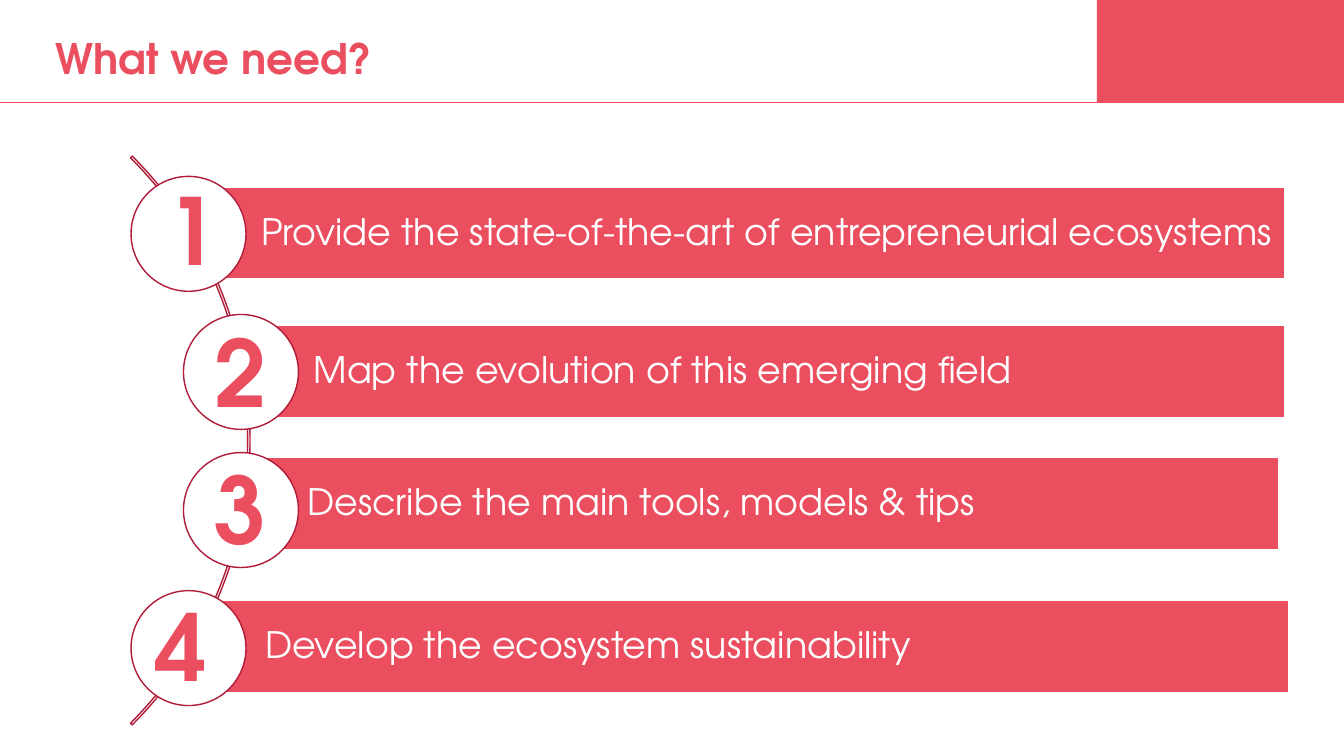
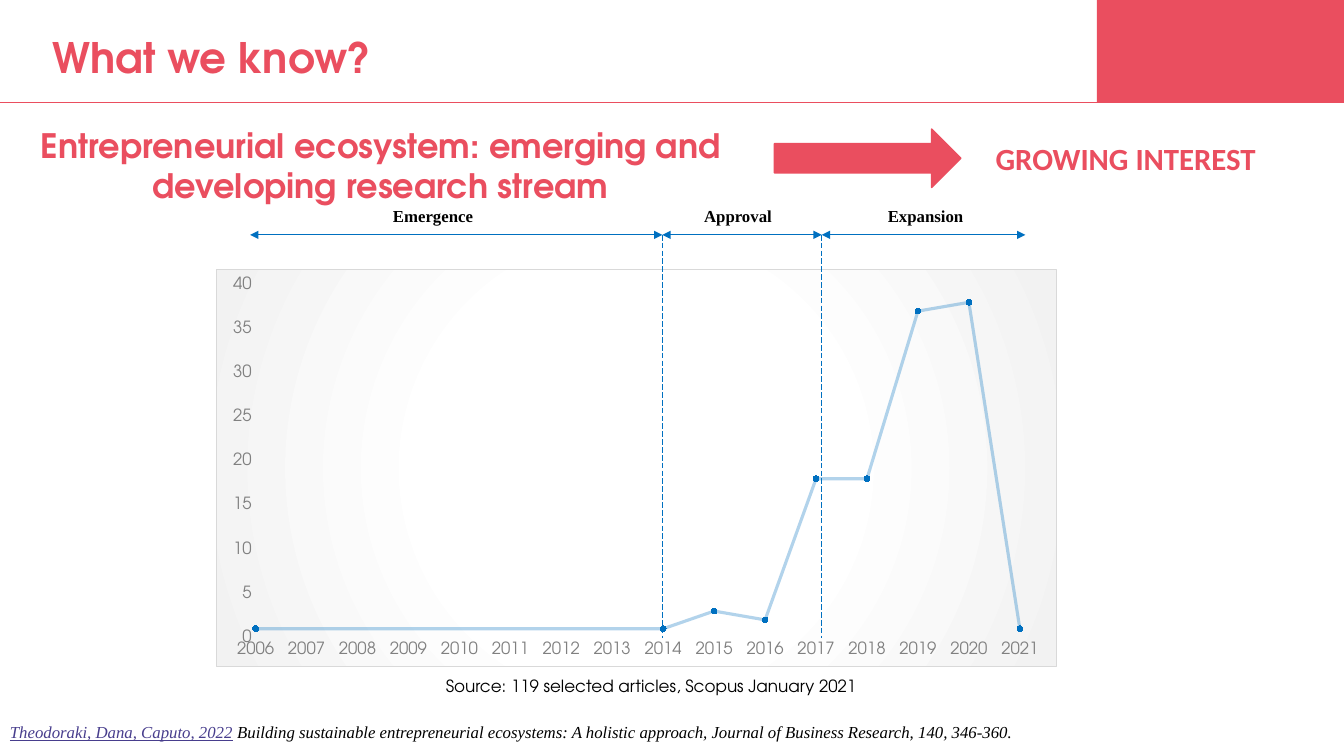
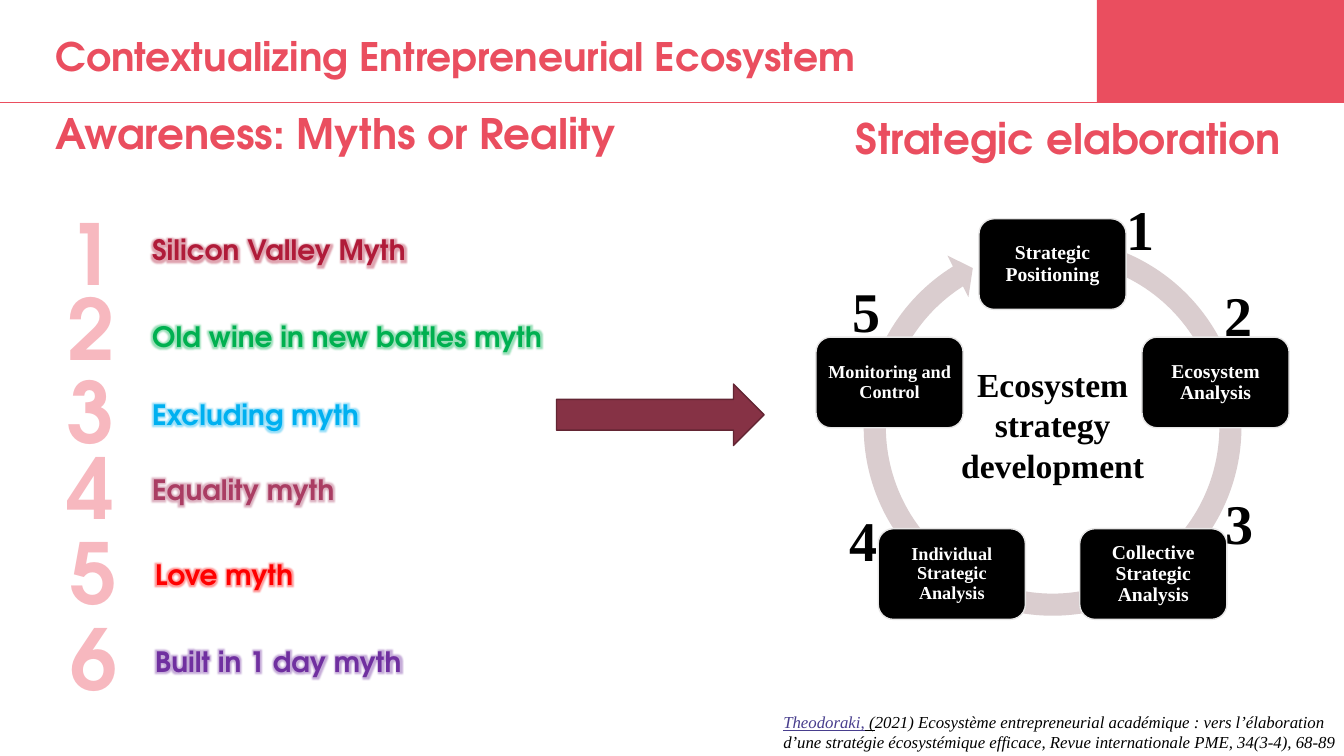
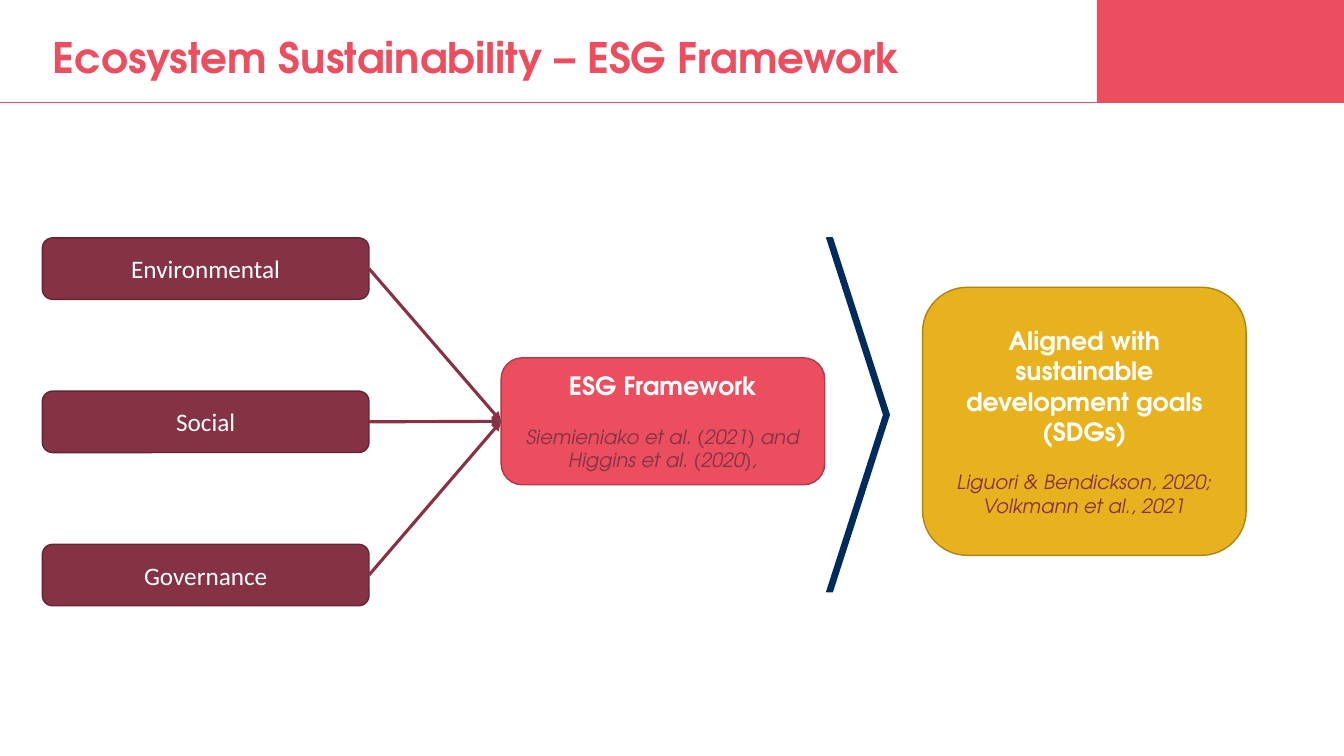
import math
import typing
import lxml.etree
import pptx
import pptx.chart.data
import pptx.dml.color
import pptx.enum.chart
import pptx.enum.dml
import pptx.enum.shapes
import pptx.enum.text
import pptx.oxml
import pptx.oxml.ns
import pptx.util

W, H = 13.33, 7.5
BAND_W, BAND_H = 2.45, 1.02

CORAL, WINE, DARK_WINE, CRIMSON = "EA4E5F", "863245", "632533", "B01B39"
PINK, MAUVE, NAVY, GOLD, BLUE = "F7B8BF", "DACDCF", "002B5C", "E8B21F", "0070C0"
BLACK, WHITE, GRAY, LINK = "000000", "FFFFFF", "808080", "483E8D"

SANS, SERIF, PLAIN = "TeX Gyre Adventor", "Times New Roman", "Calibri"
INSET = (0.1, 0.05, 0.1, 0.05)

SHAPE = pptx.enum.shapes.MSO_SHAPE
ALIGN = pptx.enum.text.PP_ALIGN
ANCHOR = pptx.enum.text.MSO_ANCHOR
LEFT_SITE, RIGHT_SITE = 1, 3


class Need(typing.NamedTuple):
    text: str
    indent: float
    bar_dx: float
    bar_dy: float
    digit_dx: float
    digit_dy: float


class Myth(typing.NamedTuple):
    text: str
    color: str
    indent: float
    digit_y: float
    text_y: float


class Step(typing.NamedTuple):
    text: str
    size: int
    digit_dx: float
    digit_dy: float


class Phase(typing.NamedTuple):
    name: str
    start: float
    end: float
    shift: float


NEEDS = (
    Need("Provide the state-of-the-art of entrepreneurial ecosystems", 0, 0.57, 0.11, 0.25, -0.08),
    Need("Map the evolution of this emerging field", 0.52, 0.57, 0.11, 0.21, -0.04),
    Need("Describe the main tools, models & tips", 0.52, 0.51, 0.05, 0.21, -0.05),
    Need("Develop the ecosystem sustainability", 0, 0.61, 0.1, 0.14, -0.06),
)
ARTICLES = {2021: 1, 2020: 38, 2019: 37, 2018: 18, 2017: 18, 2016: 2, 2015: 3, 2014: 1, 2006: 1}
PHASES = (
    Phase("Emergence", 2.48, 6.57, -0.23),
    Phase("Approval", 6.57, 8.15, -0.04),
    Phase("Expansion", 8.15, 10.17, 0.02),
)
MYTHS = (
    Myth("Silicon Valley Myth", CRIMSON, 0, 1.95, 2.26),
    Myth("Old wine in new bottles myth", "00B050", 0, 2.69, 3.12),
    Myth("Excluding myth", "00B0F0", 0, 3.52, 3.89),
    Myth("Equality myth", "AA3D63", 0, 4.27, 4.64),
    Myth("Love myth", "FF0000", 0.03, 5.11, 5.48),
    Myth("Built in 1 day myth", "7030A0", 0.03, 5.97, 6.34),
)
STEPS = (
    Step("Strategic Positioning", 14, 1.36, -0.29),
    Step("Ecosystem Analysis", 14, 0.72, -0.61),
    Step("Collective Strategic Analysis", 14, 1.35, -0.45),
    Step("Individual Strategic Analysis", 13, -0.38, -0.28),
    Step("Monitoring and Control", 13, 0.26, -0.65),
)
PILLARS = ("Environmental", "Social", "Governance")


def rgb(color):
    return pptx.dml.color.RGBColor.from_string(color)


def inches(*values):
    return [pptx.util.Inches(v) for v in values]


def find(element, tag):
    return element.find(".//" + pptx.oxml.ns.qn(tag))


def child(parent, tag, **attributes):
    return lxml.etree.SubElement(parent, pptx.oxml.ns.qn(tag), attributes)


def style(font, size, color, name=SANS, bold=False, italic=False, underline=False):
    font.size, font.name = pptx.util.Pt(size), name
    font.bold, font.italic, font.underline = bold, italic, underline
    font.color.rgb = rgb(color)


def write(p, text, size, color, align=ALIGN.LEFT, **look):
    p.text = text
    p.alignment = align
    for r in p.runs:
        style(r.font, size, color, **look)


def frame(sp, anchor=ANCHOR.TOP, inset=INSET, wrap=True):
    tf = sp.text_frame
    tf.auto_size = pptx.enum.text.MSO_AUTO_SIZE.NONE
    tf.word_wrap = wrap
    tf.vertical_anchor = anchor
    tf.margin_left, tf.margin_top, tf.margin_right, tf.margin_bottom = inches(*inset)
    return tf.paragraphs[0]


def textbox(s, box, text, size, color, anchor=ANCHOR.TOP, wrap=True, **look):
    sp = s.shapes.add_textbox(*inches(*box))
    write(frame(sp, anchor, wrap=wrap), text, size, color, **look)
    return sp


def shape(s, kind, box, fill=None, line=None, adjust=()):
    sp = s.shapes.add_shape(kind, *inches(*box))
    sp.shadow.inherit = False
    if fill:
        sp.fill.solid()
        sp.fill.fore_color.rgb = rgb(fill)
    else:
        sp.fill.background()
    if line:
        sp.line.color.rgb = rgb(line)
        sp.line.width = pptx.util.Pt(1)
    else:
        sp.line.fill.background()
    for i, value in enumerate(adjust):
        sp.adjustments[i] = value
    return sp


def percent(value):
    return value / 100


def angle(degrees):
    return degrees * 60000 / 100000


def connector(s, start, end, color, width, dashed=False, ends=()):
    c = s.shapes.add_connector(pptx.enum.shapes.MSO_CONNECTOR.STRAIGHT, *inches(*start, *end))
    c.line.color.rgb = rgb(color)
    c.line.width = pptx.util.Pt(width)
    if dashed:
        c.line.dash_style = pptx.enum.dml.MSO_LINE.LONG_DASH
    for end_tag in ends:
        child(find(c.element, "a:ln"), end_tag, type="triangle")
    child(c.element.spPr, "a:effectLst")
    return c


def citation(s, box, runs):
    p = frame(s.shapes.add_textbox(*inches(*box)))
    for text, color, underline in runs:
        r = p.add_run()
        r.text = text
        style(r.font, 12, color, name=SERIF, italic=True, underline=underline)


def dress_layout(s):
    rule = connector(s, (0, BAND_H), (W, BAND_H), CORAL, 1)
    band = shape(s, SHAPE.RECTANGLE, (W - BAND_W, 0, BAND_W, BAND_H), CORAL)
    for sp in (rule, band):
        s.slide_layout.shapes.element.append(sp.element)


def titled_slide(prs, title, left=0.42, top=0.26, size=30):
    s = prs.slides.add_slide(prs.slide_layouts[5])
    sp = s.shapes.title
    sp.left, sp.top, sp.width, sp.height = inches(left, top, 10.05, 0.61)
    write(frame(sp), title, size, CORAL, bold=True)
    return s


def needs_list(s, left, top):
    pitch, disc, bar_w, bar_h, arc = 1.37, 1.14, 10.87, 0.91, 7.98
    shape(s, SHAPE.BLOCK_ARC, (left - 6.8, top - pitch, arc, arc), line=CRIMSON,
          adjust=(angle(315), angle(45), percent(0.3)))
    for i, need in enumerate(NEEDS):
        x, y = left + need.indent, top + i * pitch
        bar_box = (x + need.bar_dx, y + need.bar_dy, bar_w - need.indent, bar_h)
        bar = shape(s, SHAPE.RECTANGLE, bar_box, CORAL, WHITE)
        p = frame(bar, ANCHOR.MIDDLE, (0.72, 0.07, 0.07, 0.07))
        write(p, need.text, 26, WHITE)
        p.line_spacing = 0.9
        shape(s, SHAPE.OVAL, (x, y, disc, disc), WHITE, CRIMSON)
        textbox(s, (x + need.digit_dx, y + need.digit_dy, 0.87, 1.21), str(i + 1), 66, CORAL, bold=True)


def style_axis(axis, low, high, step):
    axis.minimum_scale, axis.maximum_scale, axis.major_unit = low, high, step
    axis.has_major_gridlines = axis.has_minor_gridlines = False
    axis.major_tick_mark = axis.minor_tick_mark = pptx.enum.chart.XL_TICK_MARK.NONE
    axis.format.line.fill.background()
    labels = axis.tick_labels
    labels.number_format, labels.number_format_is_linked = "General", False
    style(labels.font, 12, GRAY)


def style_series(series, color):
    series.smooth = False
    series.format.line.width = pptx.util.Pt(2.25)
    series.format.line.color.rgb = rgb(color)
    marker = series.marker
    marker.style = pptx.enum.chart.XL_MARKER_STYLE.CIRCLE
    marker.size = 4
    marker.format.fill.solid()
    marker.format.fill.fore_color.rgb = rgb(color)
    marker.format.line.color.rgb = rgb(color)


def fade_series_line(chart):
    line = find(find(chart.element, "c:ser"), "a:ln")
    child(find(line, "a:srgbClr"), "a:alpha", val="30000")


def fill_chart_area(chart):
    area = lxml.etree.Element(pptx.oxml.ns.qn("c:spPr"))
    gradient = child(area, "a:gradFill")
    stops = child(gradient, "a:gsLst")
    for position, color in (("43000", WHITE), ("100000", "F2F2F2")):
        child(child(stops, "a:gs", pos=position), "a:srgbClr", val=color)
    center = dict.fromkeys("ltrb", "50000")
    child(child(gradient, "a:path", path="circle"), "a:fillToRect", **center)
    border = child(child(area, "a:ln", w="9525"), "a:solidFill")
    child(border, "a:srgbClr", val="D9D9D9")
    find(chart.element, "c:chart").addnext(area)


def place_plot(chart, shares):
    plot = find(chart.element, "c:plotArea")
    for old in plot.findall(pptx.oxml.ns.qn("c:layout")):
        plot.remove(old)
    layout = lxml.etree.Element(pptx.oxml.ns.qn("c:layout"))
    plot.insert(0, layout)
    manual = child(layout, "c:manualLayout")
    for tag, value in (("c:layoutTarget", "inner"), ("c:xMode", "edge"), ("c:yMode", "edge")):
        child(manual, tag, val=value)
    for tag, share in zip(("c:x", "c:y", "c:w", "c:h"), shares):
        child(manual, tag, val=str(share))


def articles_chart(s, box):
    width, height = box[2:]
    data = pptx.chart.data.XyChartData()
    articles = data.add_series("Series 1")
    for year, count in ARTICLES.items():
        articles.add_data_point(year, count)
    kind = pptx.enum.chart.XL_CHART_TYPE.XY_SCATTER_LINES
    chart = s.shapes.add_chart(kind, *inches(*box), data).chart
    chart.has_title = chart.has_legend = False
    style(chart.font, 10, BLACK)
    chart.plots[0].vary_by_categories = False
    style_axis(chart.category_axis, min(ARTICLES), max(ARTICLES), 1)
    style_axis(chart.value_axis, 0, 40, 5)
    style_series(chart.plots[0].series[0], BLUE)
    fade_series_line(chart)
    fill_chart_area(chart)
    place_plot(chart, (0.39 / width, 0.15 / height, 7.59 / width, 3.51 / height))


def phase_marks(s, top, bottom):
    label_w = 2.41
    for phase in PHASES:
        connector(s, (phase.start, top), (phase.end, top), BLUE, 0.5, ends=("a:headEnd", "a:tailEnd"))
        center = (phase.start + phase.end) / 2 + phase.shift
        textbox(s, (center - label_w / 2, top - 0.34, label_w, 0.22), phase.name, 12, BLACK,
                name=SERIF, bold=True, align=ALIGN.CENTER)
    for phase in PHASES[1:]:
        connector(s, (phase.start, top), (phase.start, bottom), BLUE, 0.5, dashed=True)


def add_glow(sp, color):
    effects = lxml.etree.Element(pptx.oxml.ns.qn("a:effectLst"))
    glow = child(effects, "a:glow", rad="101600")
    child(child(glow, "a:srgbClr", val=color), "a:alpha", val="40000")
    find(find(sp.element, "a:rPr"), "a:solidFill").addnext(effects)


def myths_list(s, left):
    for i, myth in enumerate(MYTHS):
        x = left + myth.indent
        textbox(s, (x, myth.digit_y, 1.34, 1.11), str(i + 1), 60, PINK, bold=True, align=ALIGN.CENTER)
        label = textbox(s, (x + 1.18, myth.text_y, 4.2, 0.44), myth.text, 20, myth.color, bold=True)
        add_glow(label, myth.color)


def strategy_cycle(s, cx, cy):
    radius, node_w, node_h, ring = 1.7, 1.46, 0.9, 3.99
    shape(s, SHAPE.CIRCULAR_ARROW, (cx - ring / 2, cy - 2.08, ring, ring), MAUVE,
          adjust=(percent(5.5), angle(5.51), angle(237.83), angle(284.87), percent(5.8)))
    for i, step in enumerate(STEPS):
        turn = 2 * math.pi * i / len(STEPS)
        x = cx + radius * math.sin(turn) - node_w / 2
        y = cy - radius * math.cos(turn) - node_h / 2
        node = shape(s, SHAPE.ROUNDED_RECTANGLE, (x, y, node_w, node_h), BLACK, "E7E6E6")
        p = frame(node, ANCHOR.MIDDLE, (0.05, 0.05, 0.05, 0.05))
        write(p, step.text, step.size, WHITE, name=SERIF, bold=True, align=ALIGN.CENTER)
        p.line_spacing = 0.9
        textbox(s, (x + step.digit_dx, y + step.digit_dy, 0.57, 0.77), str(i + 1), 40, BLACK,
                name=SERIF, bold=True)
    textbox(s, (cx - 1.44, cy - 0.89, 2.88, 1.56), "Ecosystem strategy development", 24, BLACK,
            anchor=ANCHOR.MIDDLE, name=SERIF, bold=True, align=ALIGN.CENTER)


def card(s, box, fill, line, heading, source):
    sp = shape(s, SHAPE.ROUNDED_RECTANGLE, box, fill, line)
    write(frame(sp, ANCHOR.MIDDLE), heading, 18, WHITE, bold=True, align=ALIGN.CENTER)
    p = sp.text_frame.add_paragraph()
    write(p, source, 14, WINE, italic=True, align=ALIGN.CENTER)
    p.space_before = pptx.util.Pt(17)
    return sp


def pillars(s, left, top, target):
    pitch, width, height = 1.52, 3.24, 0.61
    for i, name in enumerate(PILLARS):
        box = (left, top + i * pitch, width, height)
        sp = shape(s, SHAPE.ROUNDED_RECTANGLE, box, WINE, DARK_WINE)
        write(frame(sp, ANCHOR.MIDDLE), name, 18, WHITE, name=PLAIN, align=ALIGN.CENTER)
        c = connector(s, (0, 0), (1, 1), WINE, 2.25, ends=("a:tailEnd",))
        c.begin_connect(sp, RIGHT_SITE)
        c.end_connect(target, LEFT_SITE)


def needs_slide(prs):
    s = titled_slide(prs, "What we need?", 0.45, 0.27)
    dress_layout(s)
    needs_list(s, 1.3, 1.75)


def knowledge_slide(prs):
    s = titled_slide(prs, "What we know?")
    textbox(s, (0.23, 1.19, 7.09, 0.91), "Entrepreneurial ecosystem: emerging and developing research stream",
            24, CORAL, bold=True, align=ALIGN.CENTER)
    textbox(s, (9.76, 1.34, 2.81, 0.47), "GROWING INTEREST", 22, CORAL, wrap=False,
            name=PLAIN, bold=True, align=ALIGN.CENTER)
    shape(s, SHAPE.RIGHT_ARROW, (7.68, 1.28, 1.85, 0.58), CORAL, CORAL)
    textbox(s, (4.3, 6.65, 4.32, 0.3), "Source: 119 selected articles, Scopus January 2021", 12, BLACK,
            wrap=False, align=ALIGN.CENTER)
    articles_chart(s, (2.14, 2.67, 8.34, 3.95))
    phase_marks(s, 2.33, 6.33)
    citation(s, (0, 7.11, W, 0.35), (
        ("Theodoraki, Dana, Caputo, 2022", LINK, True),
        (" Building sustainable entrepreneurial ecosystems: A holistic approach, "
         "Journal of Business Research, 140, 346-360.", BLACK, False)))


def context_slide(prs):
    s = titled_slide(prs, "Contextualizing Entrepreneurial Ecosystem", 0.45, 0.27, 28)
    textbox(s, (0.45, 1.02, 7.13, 0.61), "Awareness: Myths or Reality", 30, CORAL, bold=True)
    textbox(s, (8.39, 1.07, 4.88, 0.61), "Strategic elaboration", 30, CORAL, bold=True)
    myths_list(s, 0.23)
    shape(s, SHAPE.RIGHT_ARROW, (5.52, 3.81, 2.06, 0.61), WINE, DARK_WINE)
    strategy_cycle(s, 10.44, 4.32)
    citation(s, (7.67, 7.01, 5.78, 0.5), (
        ("Theodoraki,", LINK, True),
        (" (", BLACK, True),
        ("2021) Ecosystème entrepreneurial académique : vers l’élaboration d’une stratégie "
         "écosystémique efficace, Revue internationale PME, 34(3-4), 68-89", BLACK, False)))


def framework_slide(prs):
    s = titled_slide(prs, "Ecosystem Sustainability – ESG Framework")
    esg = card(s, (4.97, 3.55, 3.21, 1.26), CORAL, "AD3A46", "ESG Framework",
               "Siemieniako et al. (2021) and Higgins et al. (2020),")
    pillars(s, 0.42, 2.36, esg)
    shape(s, SHAPE.CHEVRON, (8.2, 2.36, 0.62, 3.51), NAVY, NAVY, (percent(91),))
    card(s, (9.15, 2.85, 3.21, 2.66), GOLD, "AC8417",
         "Aligned with sustainable development goals\n(SDGs)",
         "Liguori & Bendickson, 2020; Volkmann et al., 2021")


def main():
    prs = pptx.Presentation()
    prs.slide_width, prs.slide_height = inches(W, H)
    for build in (needs_slide, knowledge_slide, context_slide, framework_slide):
        build(prs)
    prs.save("out.pptx")


if __name__ == "__main__":
    main()
